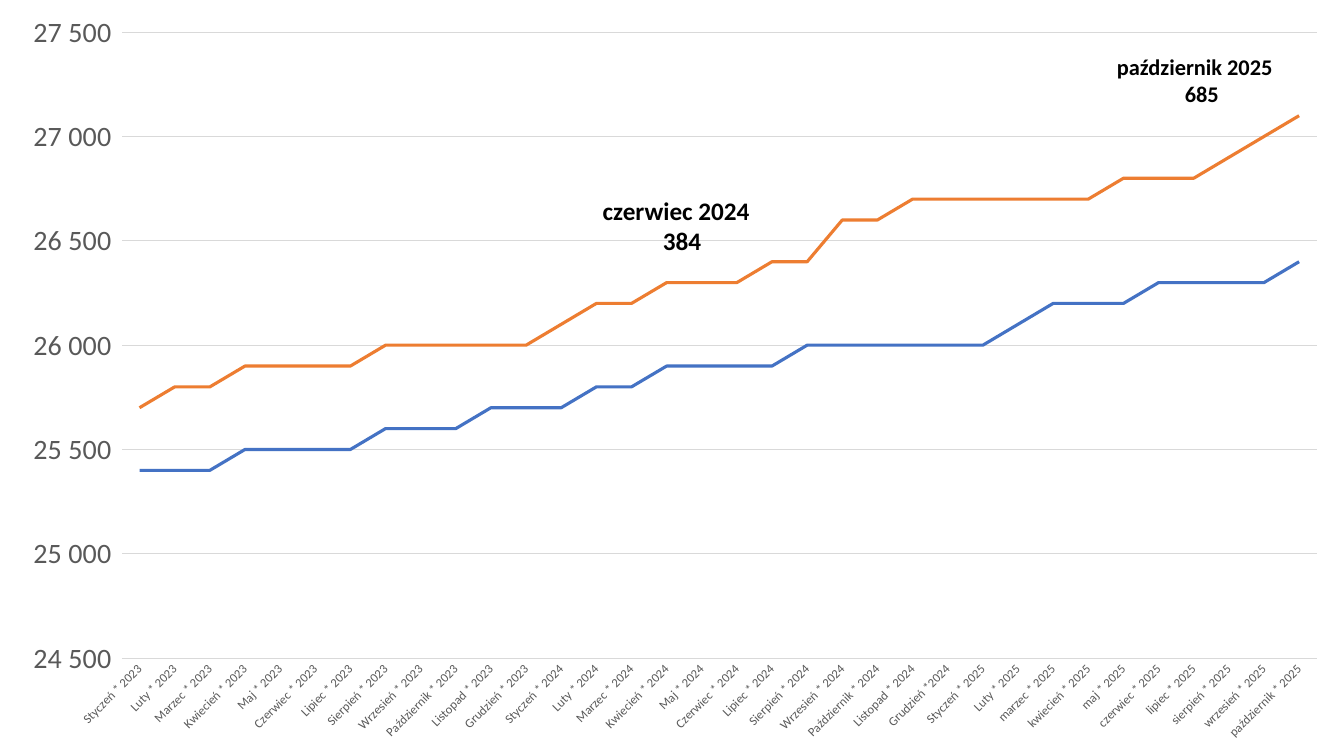
from lxml import etree
from pptx import Presentation, util as u
from pptx.chart.data import CategoryChartData
from pptx.dml.color import RGBColor
from pptx.enum import chart as charts, text
from pptx.oxml.ns import qn

WIDTH, HEIGHT = 13.33, 7.5
COLORS = {"blue": "4472C4", "orange": "ED7D31", "grid": "D9D9D9", "label": "595959", "black": "000000"}
MONTHS = ["Styczeń", "Luty", "Marzec", "Kwiecień", "Maj", "Czerwiec", "Lipiec",
          "Sierpień", "Wrzesień", "Październik", "Listopad", "Grudzień"]
BLUE_VALUES = [25400, 25400, 25400, 25500, 25500, 25500, 25500, 25600, 25600, 25600, 25700, 25700,
               25700, 25800, 25800, 25900, 25900, 25900, 25900, 26000, 26000, 26000, 26000, 26000,
               26000, 26100, 26200, 26200, 26200, 26300, 26300, 26300, 26300, 26400]
ORANGE_VALUES = [25700, 25800, 25800, 25900, 25900, 25900, 25900, 26000, 26000, 26000, 26000, 26000,
                 26100, 26200, 26200, 26300, 26300, 26300, 26400, 26400, 26600, 26600, 26700, 26700,
                 26700, 26700, 26700, 26700, 26800, 26800, 26800, 26900, 27000, 27100]


def style_line(line, color, width):
    line.color.rgb = RGBColor.from_string(COLORS[color])
    line.width = u.Pt(width)


def style_font(font, color, size, bold=False):
    font.name = "Calibri"
    font.size = u.Pt(size)
    font.bold = bold
    font.color.rgb = RGBColor.from_string(COLORS[color])


presentation = Presentation()
presentation.slide_width = u.Inches(WIDTH)
presentation.slide_height = u.Inches(HEIGHT)
slide = presentation.slides.add_slide(presentation.slide_layouts[6])

labels = []
for index in range(len(BLUE_VALUES)):
    year, month = 2023 + index // 12, MONTHS[index % 12]
    if year == 2025 and index % 12 > 1:
        month = month.lower()
    separator = " *" if (month, year) == ("Grudzień", 2024) else " * "
    labels.append(f"{month}{separator}{year}")

chart_data = CategoryChartData()
chart_data.categories = labels
chart_data.add_series("Series 1", BLUE_VALUES)
chart_data.add_series("Series 2", ORANGE_VALUES)
chart = slide.shapes.add_chart(charts.XL_CHART_TYPE.LINE, 0, 0, presentation.slide_width,
                               presentation.slide_height, chart_data).chart
chart.has_legend = False
chart.has_title = False
style_font(chart.font, "black", 10)
chart.plots[0].vary_by_categories = False
for series, color in zip(chart.plots[0].series, ("blue", "orange")):
    series.smooth = False
    series.marker.style = charts.XL_MARKER_STYLE.NONE
    style_line(series.format.line, color, 2.25)

for axis, size in ((chart.category_axis, 9), (chart.value_axis, 20)):
    axis.major_tick_mark = axis.minor_tick_mark = charts.XL_TICK_MARK.NONE
    style_font(axis.tick_labels.font, "label", size)
style_line(chart.category_axis.format.line, "grid", 0.75)
category_body = chart.category_axis._element.find(qn("c:txPr")).find(qn("a:bodyPr"))
category_body.set("rot", "-2700000")
category_body.set("vert", "horz")

value_axis = chart.value_axis
value_axis.minimum_scale, value_axis.maximum_scale, value_axis.major_unit = 24500, 27500, 500
value_axis.format.line.fill.background()
value_axis.has_major_gridlines = True
style_line(value_axis.major_gridlines.format.line, "grid", 0.75)
value_axis.tick_labels.number_format = '_-* #\\ ##0_-;\\-* #\\ ##0_-;_-* "-"??_-;_-'
value_axis.tick_labels.number_format_is_linked = False

plot_area = chart._chartSpace.chart.plotArea
for old_layout in plot_area.findall(qn("c:layout")):
    plot_area.remove(old_layout)
layout = etree.Element(qn("c:layout"))
manual = etree.SubElement(layout, qn("c:manualLayout"))
for tag, value in (("layoutTarget", "inner"), ("xMode", "edge"), ("yMode", "edge"),
                   ("x", 1.21 / WIDTH), ("y", 0.32 / HEIGHT),
                   ("w", 11.85 / WIDTH), ("h", 6.21 / HEIGHT)):
    etree.SubElement(manual, qn(f"c:{tag}")).set("val", str(value))
plot_area.insert(0, layout)

for left, top, width, height, size, month, difference in (
        (5.88, 1.89, 1.77, 0.71, 18, "czerwiec 2024", "384"),
        (10.98, 0.48, 1.88, 0.64, 16, "październik 2025", "685")):
    callout = slide.shapes.add_textbox(*map(u.Inches, (left, top, width, height)))
    frame = callout.text_frame
    frame.word_wrap = True
    frame.auto_size = text.MSO_AUTO_SIZE.SHAPE_TO_FIT_TEXT
    frame.text = f"{month}\n{difference}"
    for paragraph in frame.paragraphs:
        style_font(paragraph.font, "black", size, True)
    frame.paragraphs[1].alignment = text.PP_ALIGN.CENTER

presentation.save("out.pptx")
